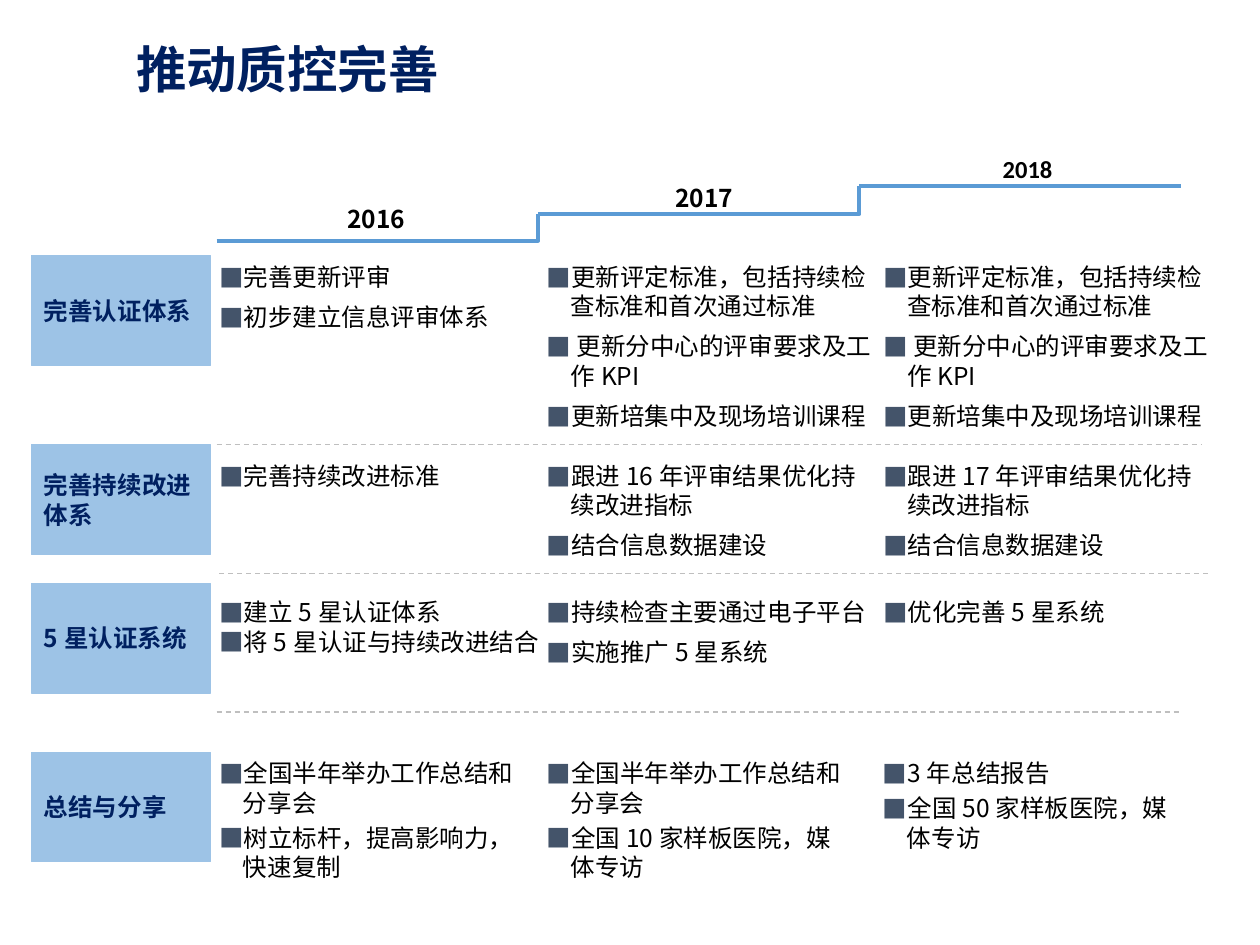
import pptx
import pptx.dml.color
import pptx.enum.dml
import pptx.enum.shapes
import pptx.enum.text
import pptx.oxml.ns
import pptx.util
from lxml import etree

Inches = pptx.util.Inches
Pt = pptx.util.Pt
RGBColor = pptx.dml.color.RGBColor
qn = pptx.oxml.ns.qn

NAVY = RGBColor(0x00, 0x20, 0x60)
BLUE = RGBColor(0x5B, 0x9B, 0xD5)
LIGHT_BLUE = RGBColor(0x9D, 0xC3, 0xE6)
GRAY = RGBColor(0xBF, 0xBF, 0xBF)
BLACK = RGBColor(0, 0, 0)
BULLET = "44546A"
CJK = "Noto Sans CJK SC"


def format_runs(paragraph, color, size=14, bold=False, face=CJK):
    """Set the Latin and East Asian font of every run."""
    for run in paragraph.runs:
        run.font.name = face
        run.font.size = Pt(size)
        run.font.bold = bold
        run.font.color.rgb = color
        east_asian = etree.SubElement(run.font._element, qn("a:ea"))
        east_asian.set("typeface", CJK)


def add_bullet(paragraph):
    props = paragraph._p.get_or_add_pPr()
    props.set("marL", str(Inches(0.19)))
    props.set("indent", str(-Inches(0.19)))
    color = etree.SubElement(props, qn("a:buClr"))
    etree.SubElement(color, qn("a:srgbClr")).set("val", BULLET)
    etree.SubElement(props, qn("a:buFont")).set("typeface", CJK)
    etree.SubElement(props, qn("a:buChar")).set("char", "■")


prs = pptx.Presentation()
prs.slide_width = Inches(10)
prs.slide_height = Inches(7.5)
slide = prs.slides.add_slide(prs.slide_layouts[5])
shapes = slide.shapes

title = shapes.title
title.left, title.top = Inches(0.98), Inches(0.29)
title.width, title.height = Inches(9.2), Inches(0.56)
title.text_frame.text = "推动质控完善"
title.text_frame.auto_size = pptx.enum.text.MSO_AUTO_SIZE.NONE
title.text_frame.vertical_anchor = pptx.enum.text.MSO_ANCHOR.MIDDLE
heading = title.text_frame.paragraphs[0]
heading.alignment = pptx.enum.text.PP_ALIGN.LEFT
heading.line_spacing = 0.9
format_runs(heading, NAVY, size=28.8, bold=True)

# Staircase of years: each step ends with a riser up to the next one
step_left, step_width = 1.72, 2.55
step_tops = [1.91, 1.7, 1.48]
for i, step_top in enumerate(step_tops):
    start = step_left + i * step_width
    end = start + step_width
    corners = [(Inches(end), Inches(step_top))]
    if i + 1 < len(step_tops):
        corners.append((Inches(end), Inches(step_tops[i + 1])))
    builder = shapes.build_freeform(Inches(start), Inches(step_top))
    builder.add_line_segments(corners, close=False)
    step = builder.convert_to_shape()
    step.shadow.inherit = False
    step.fill.background()
    step.line.color.rgb = BLUE
    step.line.width = Pt(2.25)

years = [("2016", 2.66, 1.57, CJK), ("2017", 5.26, 1.4, CJK), ("2018", 7.86, 1.17, "Calibri")]
for year, left, top, face in years:
    year_box = shapes.add_textbox(Inches(left), Inches(top), Inches(0.86), Inches(0.34))
    year_box.text_frame.word_wrap = True
    year_box.text_frame.text = year
    format_runs(year_box.text_frame.paragraphs[0], BLACK, bold=True, face=face)

for left, right, y in [(1.72, 9.54, 3.53), (1.74, 9.62, 4.55), (1.72, 9.37, 5.65)]:
    divider = shapes.add_connector(
        pptx.enum.shapes.MSO_CONNECTOR.STRAIGHT, Inches(left), Inches(y), Inches(right), Inches(y))
    divider.line.color.rgb = GRAY
    divider.line.width = Pt(0.75)
    divider.line.dash_style = pptx.enum.dml.MSO_LINE.DASH
    etree.SubElement(divider._element.spPr, qn("a:effectLst"))

# Row: label, label top, plan top, plan width, then one plan per year
# Plan: height, points between items, items
standards = ["更新评定标准，包括持续检查标准和首次通过标准", " 更新分中心的评审要求及工作KPI",
             "更新培集中及现场培训课程"]
rows = [
    ("完善认证体系", 2.03, 2.03, 2.78, [
        (0.66, 6, ["完善更新评审", "初步建立信息评审体系"]),
        (1.77, 6, standards),
        (1.45, 6, standards)]),
    ("完善持续改进体系", 3.53, 3.61, 2.78, [
        (0.66, 6, ["完善持续改进标准"]),
        (0.89, 6, ["跟进16年评审结果优化持续改进指标", "结合信息数据建设"]),
        (0.89, 6, ["跟进17年评审结果优化持续改进指标", "结合信息数据建设"])]),
    ("5星认证系统", 4.63, 4.69, 2.78, [
        (0.57, 0, ["建立5星认证体系", "将5星认证与持续改进结合"]),
        (0.66, 6, ["持续检查主要通过电子平台", "实施推广5星系统"]),
        (0.34, 6, ["优化完善5星系统"])]),
    ("总结与分享", 5.97, 5.97, 2.56, [
        (1.09, 3, ["全国半年举办工作总结和分享会", "树立标杆，提高影响力，快速复制"]),
        (1.09, 3, ["全国半年举办工作总结和分享会", "全国10家样板医院，媒体专访"]),
        (0.85, 3, ["3年总结报告", "全国50家样板医院，媒体专访"])]),
]
plan_lefts = [1.64, 4.24, 6.91]

for label, label_top, plan_top, plan_width, plans in rows:
    label_box = shapes.add_shape(
        pptx.enum.shapes.MSO_SHAPE.RECTANGLE,
        Inches(0.25), Inches(label_top), Inches(1.42), Inches(0.87))
    label_box.shadow.inherit = False
    label_box.fill.solid()
    label_box.fill.fore_color.rgb = LIGHT_BLUE
    label_box.line.color.rgb = LIGHT_BLUE
    label_box.line.width = Pt(0.75)
    label_box.text_frame.text = label
    label_box.text_frame.vertical_anchor = pptx.enum.text.MSO_ANCHOR.MIDDLE
    label_box.text_frame.paragraphs[0].alignment = pptx.enum.text.PP_ALIGN.LEFT
    format_runs(label_box.text_frame.paragraphs[0], NAVY, bold=True)

    for left, (height, gap, items) in zip(plan_lefts, plans):
        plan_box = shapes.add_textbox(
            Inches(left), Inches(plan_top), Inches(plan_width), Inches(height))
        plan_box.text_frame.word_wrap = True
        plan_box.text_frame.text = "\n".join(items)
        for i, paragraph in enumerate(plan_box.text_frame.paragraphs):
            if i > 0:
                paragraph.space_before = Pt(gap)
            add_bullet(paragraph)
            format_runs(paragraph, BLACK)

prs.save("out.pptx")
